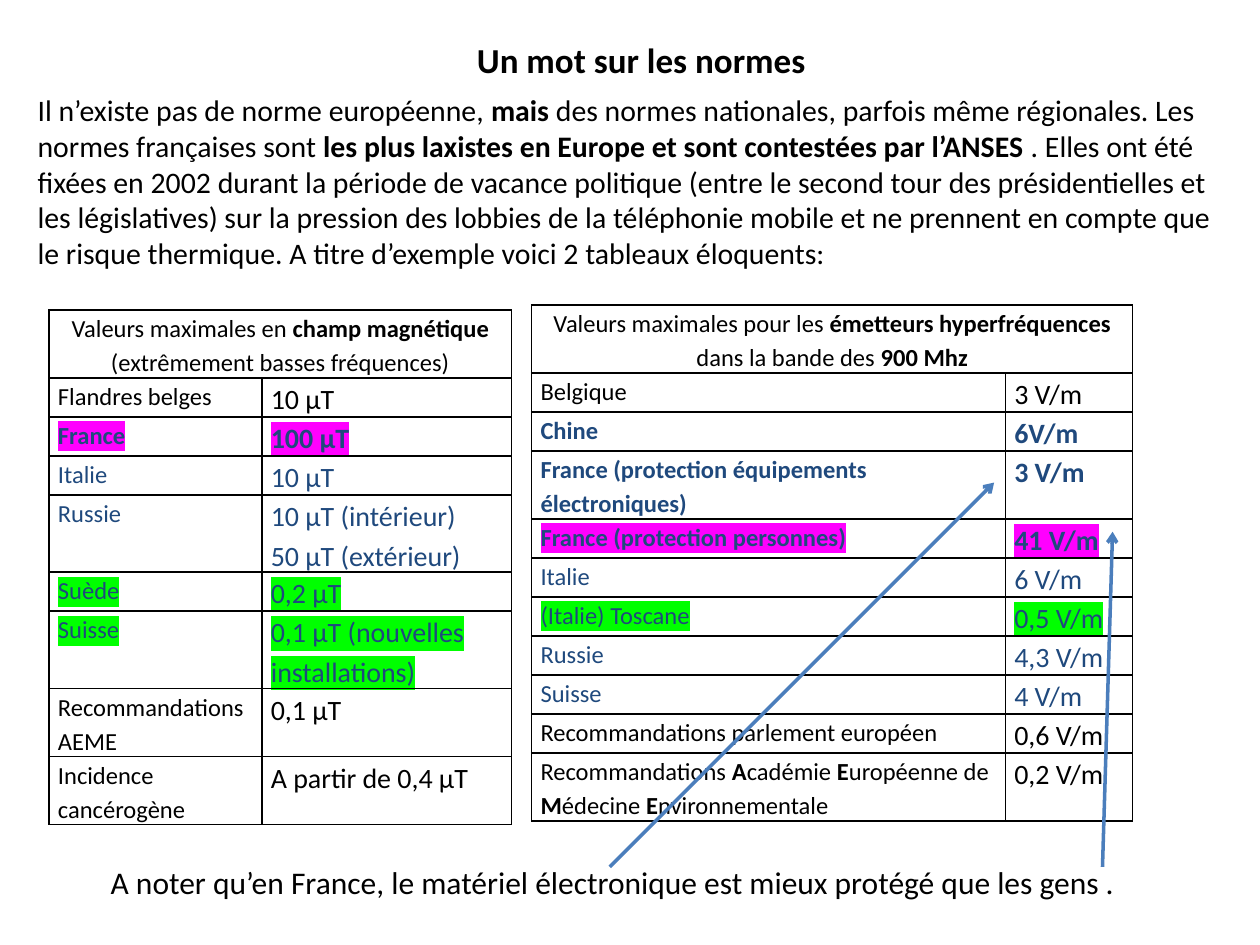
from dataclasses import dataclass
from typing import Optional

from lxml.etree import SubElement as Sub
from pptx import Presentation
from pptx.dml.color import RGBColor as Rgb
from pptx.enum.shapes import MSO_CONNECTOR as Link
from pptx.enum.text import MSO_ANCHOR as Anchor, PP_ALIGN as Align
from pptx.oxml import parse_xml
from pptx.oxml.ns import nsdecls, qn
from pptx.util import Inches, Pt

WIDE, HIGH = 10, 7.5
FONT = "Calibri"
BLACK, NAVY, BLUE = "000000", "1F497D", "4B7EBC"
PINK, GREEN = "FF00FF", "00FF00"
ONE, TWO, TALL = 4.13, 7.2, 8.13  # row heights, in % of the slide


@dataclass
class Row:
    """One table row; stars in the text switch bold on and off."""
    name: str
    value: str
    high: float = ONE
    color: str = NAVY
    mark: Optional[str] = None


@dataclass
class Grid:
    left: float
    top: float
    cols: tuple[float, float]
    head: str
    rows: list[Row]


def across(share: float) -> int:
    """Percent of the slide's width."""
    return Inches(WIDE * share / 100)


def down(share: float) -> int:
    """Percent of the slide's height."""
    return Inches(HIGH * share / 100)


def paint(fill, color: str) -> None:
    fill.solid()
    fill.fore_color.rgb = Rgb.from_string(color)


def write(frame, text: str, size: float, color: str = BLACK, mark: Optional[str] = None,
          align=Align.LEFT, space: float = 1.0) -> None:
    """Fill a frame: one paragraph a line, one run a starred part."""
    frame.word_wrap = True
    for i, line in enumerate(text.split("\n")):
        para = frame.add_paragraph() if i else frame.paragraphs[0]
        para.alignment, para.line_spacing = align, space
        for j, part in enumerate(line.split("*")):
            if not part:
                continue
            run = para.add_run()
            run.text = part
            font = run.font
            font.name, font.size, font.bold = FONT, Pt(size), j % 2 == 1
            paint(font.fill, color)
            if mark:
                light = parse_xml(f'<a:highlight {nsdecls("a")}><a:srgbClr val="{mark}"/></a:highlight>')
                run._r.rPr.find(qn("a:solidFill")).addnext(light)


def note(slide, box: tuple[float, float, float, float], text: str, size: float,
         align=Align.LEFT, anchor=Anchor.TOP) -> None:
    left, top, wide, high = box
    frame = slide.shapes.add_textbox(across(left), down(top), across(wide), down(high)).text_frame
    frame.vertical_anchor = anchor
    write(frame, text, size, align=align)


def style(cell) -> None:
    """Clear the fill, set the insets and draw thin black borders."""
    cell.margin_left = cell.margin_right = Inches(0.07)
    cell.margin_top = cell.margin_bottom = 0
    props = cell._tc.get_or_add_tcPr()
    for side in ("lnL", "lnR", "lnT", "lnB"):
        edge = Sub(props, qn(f"a:{side}"), w=str(Pt(1)))
        Sub(Sub(edge, qn("a:solidFill")), qn("a:srgbClr"), val=BLACK)
    cell.fill.background()


def draw(slide, grid: Grid) -> None:
    highs = [TWO] + [row.high for row in grid.rows]
    table = slide.shapes.add_table(len(highs), 2, across(grid.left), down(grid.top),
                                   across(sum(grid.cols)), down(sum(highs))).table
    table.first_row = table.horz_banding = False
    for col, wide in zip(table.columns, grid.cols):
        col.width = across(wide)
    for line, high in zip(table.rows, highs):
        line.height = down(high)
        for cell in line.cells:
            style(cell)
    # Heading over both columns
    head = table.cell(0, 0)
    head.merge(table.cell(0, 1))
    write(head.text_frame, grid.head, 14, align=Align.CENTER, space=1.15)
    # Names and limits
    for i, row in enumerate(grid.rows, 1):
        for j, (text, size) in enumerate([(row.name, 14), (row.value, 16)]):
            write(table.cell(i, j).text_frame, text, size, row.color, row.mark, space=1.15)


def arrow(slide, start: tuple[float, float], end: tuple[float, float]) -> None:
    line = slide.shapes.add_connector(Link.STRAIGHT, across(start[0]), down(start[1]),
                                      across(end[0]), down(end[1]))
    line.line.width = Pt(2)
    paint(line.line.fill, BLUE)
    Sub(line.line._get_or_add_ln(), qn("a:tailEnd"), type="arrow")
    Sub(line._element.spPr, qn("a:effectLst"))


FIELD = Grid(3.9, 32.8, (16.9, 19.8),
             "Valeurs maximales en *champ magnétique *(extrêmement basses fréquences)", [
                 Row("Flandres belges", "10 µT", color=BLACK),
                 Row("*France*", "*100 µT*", mark=PINK),
                 Row("Italie", "10 µT"),
                 Row("Russie", "10 µT (intérieur)\n50 µT (extérieur)", TALL),
                 Row("Suède", "0,2 µT", mark=GREEN),
                 Row("Suisse", "0,1 µT (nouvelles installations)", TALL, mark=GREEN),
                 Row("Recommandations AEME", "0,1 µT", TWO, BLACK),
                 Row("Incidence cancérogène", "A partir de 0,4 µT", TWO, BLACK),
             ])

WAVES = Grid(42.2, 32.27, (37.6, 10.1),
             "Valeurs maximales pour les *émetteurs hyperfréquences*\ndans la bande des *900 Mhz*", [
                 Row("Belgique", "3 V/m", color=BLACK),
                 Row("*Chine*", "*6V/m*"),
                 Row("*France (protection équipements électroniques)*", "*3 V/m*", TWO),
                 Row("*France (protection personnes)*", "*41 V/m*", mark=PINK),
                 Row("Italie", "6 V/m"),
                 Row("(Italie) Toscane", "0,5 V/m", mark=GREEN),
                 Row("Russie", "4,3 V/m"),
                 Row("Suisse", "4 V/m"),
                 Row("Recommandations parlement européen", "0,6 V/m", color=BLACK),
                 Row("Recommandations *A*cadémie *E*uropéenne de *M*édecine *E*nvironnementale",
                     "0,2 V/m", TWO, BLACK),
             ])

INTRO = (
    "Il n’existe pas de norme européenne, *mais* des normes nationales, parfois même régionales. "
    "Les normes françaises sont *les plus laxistes en Europe et sont contestées par l’ANSES *. "
    "Elles ont été fixées en 2002 durant la période de vacance politique (entre le second tour "
    "des présidentielles et les législatives) sur la pression des lobbies de la téléphonie mobile "
    "et ne prennent en compte que le risque thermique. A titre d’exemple voici 2 tableaux éloquents:"
)


def main() -> None:
    deck = Presentation()
    deck.slide_width, deck.slide_height = Inches(WIDE), Inches(HIGH)
    slide = deck.slides.add_slide(deck.slide_layouts[6])
    # Title and introduction
    note(slide, (5.9, 1.73, 90, 9.2), "*Un mot sur les normes*", 20, Align.CENTER, Anchor.MIDDLE)
    note(slide, (2, 9.07, 95.3, 20.4), INTRO, 17)
    # Tables of limits
    for grid in (FIELD, WAVES):
        draw(slide, grid)
    # Closing remark, with arrows to the two French limits
    note(slide, (7.8, 90.67, 92.2, 5.33),
         "A noter qu’en France, le matériel électronique est mieux protégé que les gens .", 18)
    arrow(slide, (48.4, 91.73), (78.9, 51.07))
    arrow(slide, (87.5, 91.73), (88.3, 56.27))
    deck.save("out.pptx")


if __name__ == "__main__":
    main()
